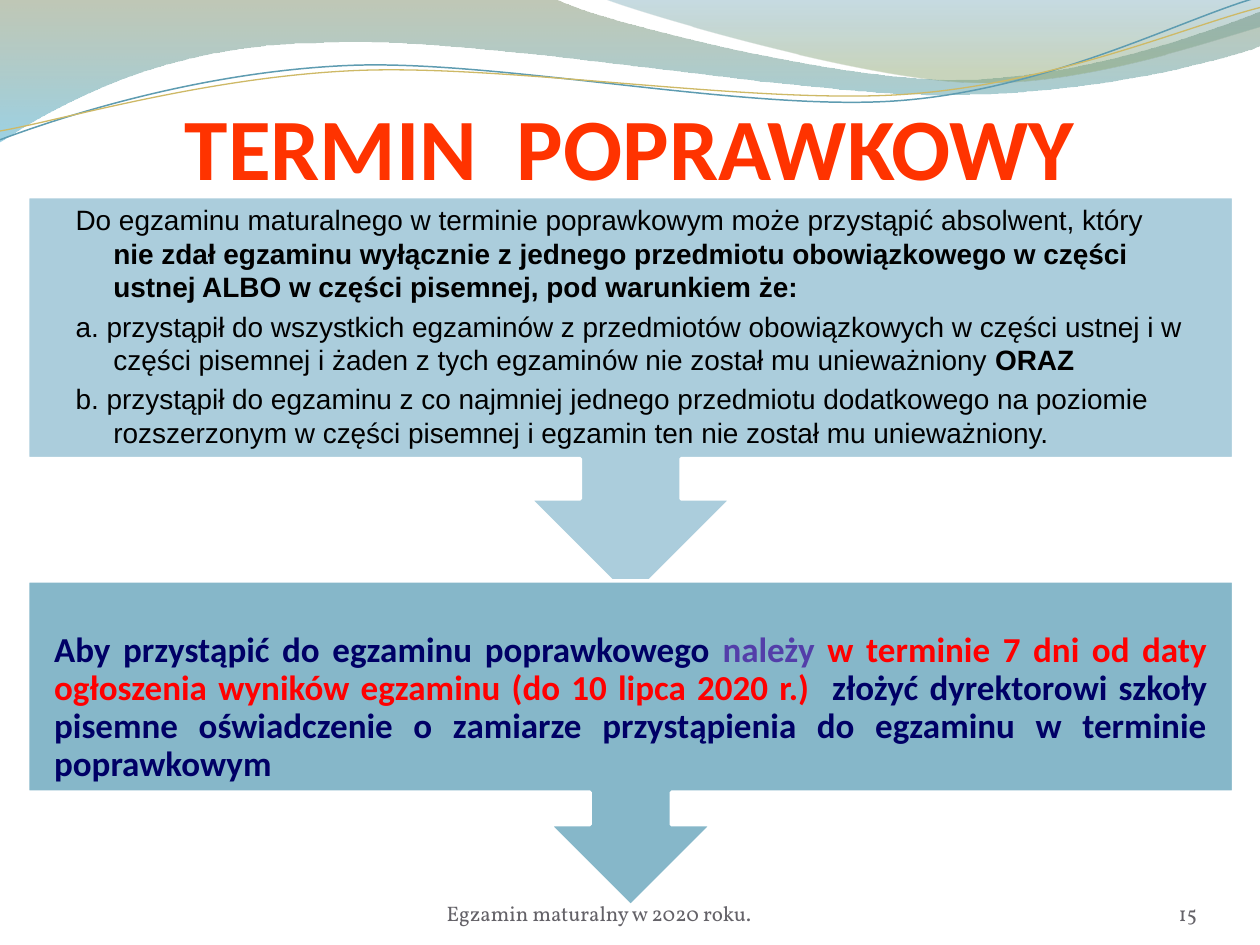
"""Build the slide on the retake date of the school-leaving exam."""
from lxml.etree import Element, SubElement as Sub
from pptx import Presentation
from pptx.dml.color import RGBColor as RGB
from pptx.enum.shapes import MSO_SHAPE as Kind
from pptx.enum.text import MSO_ANCHOR as Anchor, MSO_AUTO_SIZE as Auto, PP_ALIGN as Align
from pptx.oxml.ns import qn
from pptx.util import Inches, Pt

WHITE, BLACK, GREY = RGB(255, 255, 255), RGB(0, 0, 0), RGB(0x64, 0x62, 0x68)
ORANGE, RED = RGB(0xFF, 0x33, 0x00), RGB(0xFF, 0, 0)
NAVY, VIOLET = RGB(0, 0, 0x66), RGB(0x53, 0x3E, 0xA9)
PALE, TEAL = RGB(0xAB, 0xCD, 0xDC), RGB(0x86, 0xB7, 0xC9)
OLIVE, SKY = RGB(0x74, 0x85, 0x5E), RGB(0x4A, 0xAC, 0xCE)
SEA, MOSS = RGB(0x45, 0x88, 0x9F), RGB(0x8A, 0xA3, 0x6D)
BLUE, GOLD = RGB(0x5E, 0x9C, 0xB1), RGB(0xCE, 0xB9, 0x66)

deck = Presentation()
deck.slide_width, deck.slide_height = Inches(10), Inches(7.5)
slide = deck.slides.add_slide(deck.slide_layouts[1])
shapes = slide.shapes
title, body = slide.placeholders


def trace(start, steps, close):
    """Draw an outline of straight steps (x, y) and Bezier steps (six numbers)."""
    spots = [spot for step in steps for spot in zip(step[::2], step[1::2])]
    pen = shapes.build_freeform(Inches(start[0]), Inches(start[1]))
    pen.add_line_segments([(Inches(x), Inches(y)) for x, y in spots], close=close)
    shape = pen.convert_to_shape()
    shape.shadow.inherit = False
    lines = iter(list(shape._element.iter(qn("a:lnTo"))))
    for step in steps:
        trio = [next(lines) for _ in step[::2]]
        if len(trio) == 3:
            curve = Element(qn("a:cubicBezTo"))
            trio[0].addprevious(curve)
            for line in trio:
                curve.append(line[0])
                line.getparent().remove(line)
    return shape


def write(para, text, font, size, color, bold=False):
    """Add one formatted run."""
    run = para.add_run()
    run.text = text
    run.font.name, run.font.size, run.font.bold = font, Pt(size), bold
    run.font.color.rgb = color


waves = [
    ((0, -0.01), [(4.4, -0.01), (4.76, 0.17, 6.64, 0.63, 7.58, 0.63),
                  (8.53, 0.63, 9.58, 0.26, 10, 0.09), (10.01, 0.36),
                  (9.83, 0.44, 8.7, 0.76, 7.46, 0.75), (6.22, 0.75, 3.82, 0.28, 2.57, 0.34),
                  (1.29, 0.35, 0.46, 0.83, -0.01, 1.13), (0, -0.01)],
     [(OLIVE, 0, 45), (SKY, 100, 55)]),
    ((4.79, -0.01), [(5.09, 0.11, 6.82, 0.62, 7.69, 0.65),
                     (8.56, 0.69, 9.61, 0.32, 10, 0.21), (10, 0), (4.79, -0.01)],
     [(SEA, 0, 30), (MOSS, 80, 45)]),
]
for start, steps, stops in waves:
    wave = trace(start, steps, True)
    wave.line.fill.background()
    wave.fill.gradient()
    wave.fill.gradient_angle = 270
    marks = wave._element.spPr.iter(qn("a:gs"))
    for stop, mark, (color, place, alpha) in zip(wave.fill.gradient_stops, list(marks), stops):
        stop.color.rgb = color
        mark.set("pos", str(place * 1000))
        Sub(mark[0], qn("a:alpha"), val=str(alpha * 1000))

threads = [
    ((0, 1.11), [(0.48, 0.93, 1.58, 0.57, 2.77, 0.52), (3.95, 0.47, 5.93, 0.89, 7.13, 0.8),
                 (8.33, 0.71, 9.38, 0.15, 9.98, -0.02)], BLUE, 0.85),
    ((0, 1.04), [(0.47, 0.96, 1.64, 0.61, 2.83, 0.56), (4.03, 0.51, 5.97, 0.83, 7.17, 0.75),
                 (8.36, 0.67, 9.41, 0.21, 10, 0.06)], GOLD, 0.75),
]
for start, steps, color, width in threads:
    thread = trace(start, steps, False)
    thread.fill.background()
    thread.line.color.rgb, thread.line.width = color, Pt(width)

arrows = []
for top, high, color in [(1.56, 3.2, PALE), (4.61, 2.58, TEAL)]:
    arrow = shapes.add_shape(Kind.UP_ARROW_CALLOUT, Inches(0.22), Inches(top), Inches(9.57), Inches(high))
    arrow.rotation = 180
    arrow.adjustments[3] = 0.65
    arrow.shadow.inherit = False
    arrow.fill.solid()
    arrow.fill.fore_color.rgb = color
    arrow.line.color.rgb, arrow.line.width = WHITE, Pt(2)
    arrows.append(arrow)
arrows[0]._element.addnext(body._element)

title.left, title.top, title.width, title.height = [Inches(n) for n in (0.5, 0.55, 9, 1.02)]
frame = title.text_frame
frame.auto_size, frame.vertical_anchor = Auto.NONE, Anchor.BOTTOM
frame.margin_left = frame.margin_right = frame.margin_bottom = 0
head = frame.paragraphs[0]
head.alignment = Align.CENTER
write(head, "TERMIN  POPRAWKOWY", "Calibri", 50, ORANGE, True)

body.left, body.top, body.width, body.height = [Inches(n) for n in (0.5, 1.56, 9, 2.34)]
frame = body.text_frame
frame.auto_size = Auto.NONE
rules = [
    [("Do egzaminu maturalnego w terminie poprawkowym może przystąpić absolwent, który ", False),
     ("nie zdał egzaminu wyłącznie z jednego przedmiotu obowiązkowego w części "
      "ustnej ALBO w części pisemnej, pod warunkiem że:", True)],
    [("a. przystąpił do wszystkich egzaminów z przedmiotów obowiązkowych w części ustnej i w "
      "części pisemnej i żaden z tych egzaminów nie został mu unieważniony ", False),
     ("ORAZ", True)],
    [("b. przystąpił do egzaminu z co najmniej jednego przedmiotu dodatkowego na poziomie "
      "rozszerzonym w części pisemnej i egzamin ten nie został mu unieważniony.", False)],
]
for n, rule in enumerate(rules):
    para = frame.add_paragraph() if n else frame.paragraphs[0]
    para.space_before = Pt(3.2)
    props = para._p.get_or_add_pPr()
    props.set("marL", str(Inches(0.3)))
    props.set("indent", str(Inches(-0.3)))
    Sub(props, qn("a:buNone"))
    for text, bold in rule:
        write(para, text, "Arial", 16, BLACK, bold)

notes = [
    ((0.22, 5.02, 9.57, 1.22), 0.21, Anchor.TOP, Align.JUSTIFY, "Calibri", 20, True, [
        ("Aby przystąpić do egzaminu poprawkowego ", NAVY), ("należy ", VIOLET),
        ("w terminie 7 dni od daty ogłoszenia wyników egzaminu (do 10 lipca 2020 r.) ", RED),
        (" złożyć dyrektorowi szkoły pisemne oświadczenie o zamiarze przystąpienia do "
         "egzaminu w terminie poprawkowym", NAVY)]),
    ((2.92, 6.95, 3.67, 0.4), 0, Anchor.BOTTOM, Align.CENTER, "Vollkorn", 12, False,
     [("Egzamin maturalny w 2020 roku.", GREY)]),
    ((8.67, 6.95, 0.83, 0.4), 0, Anchor.BOTTOM, Align.RIGHT, "Vollkorn", 12, False,
     [("15", GREY)]),
]
for spot, side, anchor, align, font, size, bold, runs in notes:
    frame = shapes.add_textbox(*[Inches(n) for n in spot]).text_frame
    frame.word_wrap, frame.vertical_anchor = True, anchor
    frame.margin_left = frame.margin_right = Inches(side)
    frame.margin_top = frame.margin_bottom = 0
    para = frame.paragraphs[0]
    para.alignment = align
    para.line_spacing = 0.9 if bold else 1.0
    for text, color in runs:
        write(para, text, font, size, color, bold)

deck.save("out.pptx")
